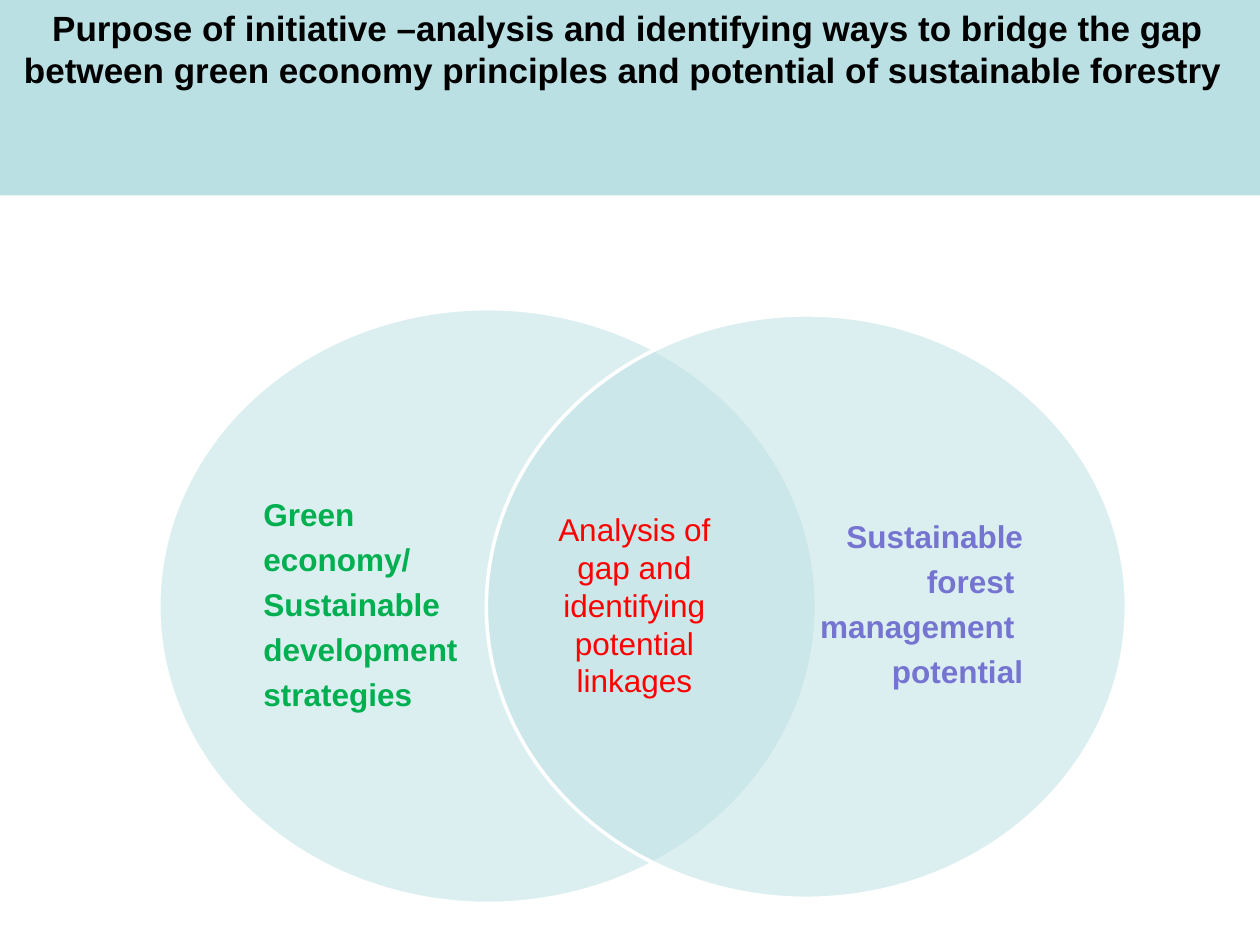
from dataclasses import dataclass

from lxml import etree
from pptx import Presentation
from pptx.dml.color import RGBColor
from pptx.enum.shapes import MSO_SHAPE as Preset
from pptx.enum.text import MSO_ANCHOR as Anchor, PP_ALIGN as Align
from pptx.oxml.ns import qn
from pptx.util import Inches, Pt

TEAL = "BBE0E3"
WHITE = "FFFFFF"


@dataclass
class Box:
    left: float
    top: float
    width: float
    height: float

    def lengths(self) -> list:
        return [Inches(v) for v in (self.left, self.top, self.width, self.height)]


@dataclass
class Style:
    color: str
    size: float = 18
    bold: bool = False
    align: Align = Align.LEFT
    line_spacing: float = 1.0
    space_after: float = 0


@dataclass
class Circle:
    outline: Box
    label: Box
    lines: list[str]
    style: Style


def rgb(value: str) -> RGBColor:
    return RGBColor.from_string(value)


def write(frame, lines: list[str], style: Style, anchor: Anchor, inset: float | None = None) -> None:
    frame.word_wrap = True
    frame.vertical_anchor = anchor
    if inset is not None:
        frame.margin_left = frame.margin_right = Inches(inset)
        frame.margin_top = frame.margin_bottom = Inches(inset)
    for index, line in enumerate(lines):
        paragraph = frame.add_paragraph() if index else frame.paragraphs[0]
        paragraph.alignment = style.align
        paragraph.line_spacing = style.line_spacing
        paragraph.space_after = Pt(style.space_after)
        run = paragraph.add_run()
        run.text = line
        run.font.name = "Arial"
        run.font.size = Pt(style.size)
        run.font.bold = style.bold
        run.font.color.rgb = rgb(style.color)


def add_filled(slide, preset: Preset, box: Box):
    shape = slide.shapes.add_shape(preset, *box.lengths())
    shape.shadow.inherit = False
    shape.fill.solid()
    shape.fill.fore_color.rgb = rgb(TEAL)
    shape.line.fill.background()
    return shape


def add_circle(slide, circle: Circle) -> None:
    """Draw a half-transparent circle with its label on top."""
    ellipse = add_filled(slide, Preset.OVAL, circle.outline)
    ellipse.line.color.rgb = rgb(WHITE)
    ellipse.line.width = Pt(2)
    fill_color = ellipse.fill._xPr.find(qn("a:solidFill"))[0]
    etree.SubElement(fill_color, qn("a:alpha"), val="50000")
    label = slide.shapes.add_textbox(*circle.label.lengths())
    write(label.text_frame, circle.lines, circle.style, Anchor.MIDDLE, inset=0.07)


def label_style(color: str, align: Align) -> Style:
    return Style(color, bold=True, align=align, line_spacing=0.9, space_after=6.3)


CIRCLES = [
    Circle(
        Box(1.26, 2.45, 5.22, 4.72),
        Box(2.02, 3.14, 3.69, 3.34),
        ["Green", "economy/", "Sustainable", "development", "strategies"],
        label_style("00B050", Align.LEFT),
    ),
    Circle(
        Box(3.86, 2.5, 5.08, 4.63),
        Box(4.6, 3.17, 3.59, 3.28),
        ["Sustainable", "forest ", "management ", "potential"],
        label_style("7575D1", Align.RIGHT),
    ),
]


def main() -> None:
    deck = Presentation()
    deck.slide_width, deck.slide_height = Inches(10), Inches(7.5)
    slide = deck.slides.add_slide(deck.slide_layouts[6])

    banner = add_filled(slide, Preset.RECTANGLE, Box(-0.03, 0, 10.03, 1.55))
    title = (
        "Purpose of initiative –analysis and identifying ways to bridge the gap "
        "between green economy principles and potential of sustainable forestry "
    )
    write(banner.text_frame, [title], Style("000000", 20, True, Align.CENTER), Anchor.TOP)

    for circle in CIRCLES:
        add_circle(slide, circle)

    overlap = slide.shapes.add_textbox(*Box(4.13, 4, 1.81, 1.62).lengths())
    write(
        overlap.text_frame,
        ["Analysis of gap and identifying potential linkages"],
        Style("FF0000", align=Align.CENTER),
        Anchor.TOP,
    )
    deck.save("out.pptx")


if __name__ == "__main__":
    main()
